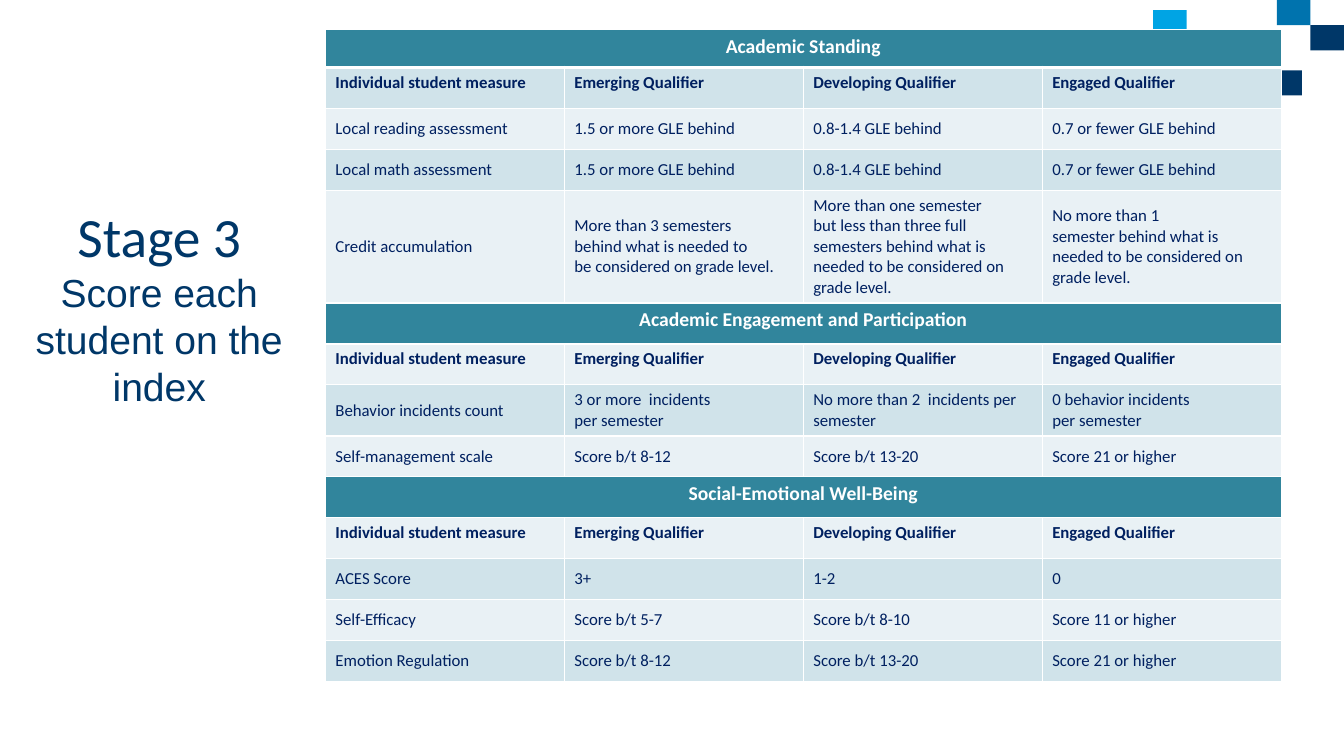
"""Build the Stage 3 slide: a student scoring index in three sections."""
from dataclasses import dataclass

from lxml import etree
from pptx import Presentation
from pptx.dml.color import RGBColor
from pptx.enum.shapes import MSO_SHAPE
from pptx.enum.text import MSO_ANCHOR, MSO_AUTO_SIZE, PP_ALIGN
from pptx.oxml.ns import qn
from pptx.util import Pt

RECTANGLE = MSO_SHAPE.RECTANGLE
TOP, MIDDLE = MSO_ANCHOR.TOP, MSO_ANCHOR.MIDDLE
LEFT, CENTER = PP_ALIGN.LEFT, PP_ALIGN.CENTER
NO_AUTOFIT = MSO_AUTO_SIZE.NONE
TITLE_ONLY = 5
TIE, HARD_SPACE = "~", chr(160)


@dataclass(frozen=True)
class Theme:
    navy: str = "003768"
    blue: str = "0073AE"
    sky: str = "00A4E4"
    teal: str = "31859C"
    ink: str = "002060"
    white: str = "FFFFFF"
    bands: tuple[str, str] = ("E9F1F5", "D0E3EA")
    table_font: str = "Calibri"
    subtitle_font: str = "Arial"
    stage_size: float = 39.6
    subtitle_size: float = 27.9
    section_size: float = 14
    body_size: float = 12


@dataclass(frozen=True)
class Tile:
    left: float
    top: float
    color: str


@dataclass(frozen=True)
class Section:
    name: str
    measures: tuple[tuple[str, str, str, str], ...]


@dataclass(frozen=True)
class CellStyle:
    fill: str
    color: str
    size: float
    bold: bool
    align: PP_ALIGN
    anchor: MSO_ANCHOR
    bottom_line: float = 1


THEME = Theme()
TILE_WIDTH, TILE_HEIGHT = 24, 18
TILES = (
    Tile(823.6, 7.3, THEME.sky),
    Tile(936, 18, THEME.navy),
    Tile(912, 0, THEME.blue),
    Tile(906, 50.2, THEME.navy),
)
INDEX_LEFT, INDEX_TOP, COLUMN_WIDTH = 232.4, 21.1, 170.7
FIRST_ROW_HEIGHT, ROW_HEIGHT = 27.2, 29.28
COLUMN_HEADS = ("Individual student measure", "Emerging Qualifier",
                "Developing Qualifier", "Engaged Qualifier")
SECTIONS = (
    Section("Academic Standing", (
        ("Local reading assessment", "1.5 or more GLE behind",
         "0.8-1.4 GLE behind", "0.7 or fewer GLE behind"),
        ("Local math assessment", "1.5 or more GLE behind",
         "0.8-1.4 GLE behind", "0.7 or fewer GLE behind"),
        ("Credit accumulation",
         "More than 3 semesters behind~what is needed to be~considered on grade level.",
         "More than one semester but~less than three full semesters~behind what is "
         "needed to be~considered on grade level.",
         "No more than 1 semester~behind what is needed to be~considered on grade level."),
    )),
    Section("Academic Engagement and Participation", (
        ("Behavior incidents count", "3 or more~ incidents per~semester",
         "No more than 2~ incidents~per semester",
         "0 behavior incidents per~semester"),
        ("Self-management scale", "Score b/t 8-12", "Score b/t 13-20",
         "Score 21 or higher"),
    )),
    Section("Social-Emotional Well-Being", (
        ("ACES Score", "3+", "1-2", "0"),
        ("Self-Efficacy", "Score b/t 5-7", "Score b/t 8-10", "Score 11 or higher"),
        ("Emotion Regulation", "Score b/t 8-12", "Score b/t 13-20",
         "Score 21 or higher"),
    )),
)


def rgb(color: str) -> RGBColor:
    return RGBColor.from_string(color)


def add_run(paragraph, text: str, font: str, size: float, color: str,
            bold: bool = False) -> None:
    run = paragraph.add_run()
    run.text = text.replace(TIE, HARD_SPACE)
    run.font.name = font
    run.font.size = Pt(size)
    run.font.bold = bold
    run.font.color.rgb = rgb(color)


def add_tile(slide, tile: Tile) -> None:
    square = slide.shapes.add_shape(RECTANGLE, Pt(tile.left), Pt(tile.top),
                                    Pt(TILE_WIDTH), Pt(TILE_HEIGHT))
    square.shadow.inherit = False
    square.fill.solid()
    square.fill.fore_color.rgb = rgb(tile.color)
    square.line.fill.background()


def fill_title(title) -> None:
    title.left, title.top, title.width, title.height = Pt(0), Pt(183.6), Pt(227.5), Pt(69.8)
    frame = title.text_frame
    frame.word_wrap = True
    frame.auto_size = NO_AUTOFIT
    frame.vertical_anchor = MIDDLE
    paragraph = frame.paragraphs[0]
    paragraph.alignment = CENTER
    add_run(paragraph, "Stage 3", THEME.table_font, THEME.stage_size, THEME.navy)
    paragraph.add_line_break()
    add_run(paragraph, "Score each student on the index", THEME.subtitle_font,
            THEME.subtitle_size, THEME.navy)


def add_borders(cell, bottom_line: float) -> None:
    properties = cell._tc.get_or_add_tcPr()
    for side, width in (("L", 1), ("R", 1), ("T", 1), ("B", bottom_line)):
        line = etree.SubElement(properties, qn(f"a:ln{side}"), w=str(Pt(width)))
        solid = etree.SubElement(line, qn("a:solidFill"))
        etree.SubElement(solid, qn("a:srgbClr"), val=THEME.white)


def fill_row(cells, texts: tuple[str, ...], style: CellStyle) -> None:
    for cell in cells:
        add_borders(cell, style.bottom_line)
        cell.fill.solid()
        cell.fill.fore_color.rgb = rgb(style.fill)
    for cell, text in zip(cells, texts):
        cell.vertical_anchor = style.anchor
        paragraph = cell.text_frame.paragraphs[0]
        paragraph.alignment = style.align
        add_run(paragraph, text, THEME.table_font, style.size, style.color, style.bold)


def add_index(slide) -> None:
    row_count = sum(2 + len(section.measures) for section in SECTIONS)
    column_count = len(COLUMN_HEADS)
    height = FIRST_ROW_HEIGHT + ROW_HEIGHT * (row_count - 1)
    index = slide.shapes.add_table(row_count, column_count, Pt(INDEX_LEFT), Pt(INDEX_TOP),
                                   Pt(COLUMN_WIDTH * column_count), Pt(height)).table
    for column in index.columns:
        column.width = Pt(COLUMN_WIDTH)
    for number, row in enumerate(index.rows):
        row.height = Pt(ROW_HEIGHT if number else FIRST_ROW_HEIGHT)

    number = 0
    for section in SECTIONS:
        cells = list(index.rows[number].cells)
        cells[0].merge(cells[-1])
        fill_row(cells, (section.name,),
                 CellStyle(THEME.teal, THEME.white, THEME.section_size, True, CENTER, TOP,
                           1 if number else 3))
        for offset, texts in enumerate((COLUMN_HEADS, *section.measures)):
            number += 1
            is_head = offset == 0
            fill_row(list(index.rows[number].cells), texts,
                     CellStyle(THEME.bands[number % 2], THEME.ink, THEME.body_size,
                               is_head, LEFT, TOP if is_head else MIDDLE))
        number += 1


def main() -> None:
    deck = Presentation()
    deck.slide_width, deck.slide_height = Pt(960), Pt(540)
    slide = deck.slides.add_slide(deck.slide_layouts[TITLE_ONLY])
    for tile in TILES:
        add_tile(slide, tile)
    fill_title(slide.shapes.title)
    add_index(slide)
    deck.save("out.pptx")


if __name__ == "__main__":
    main()
